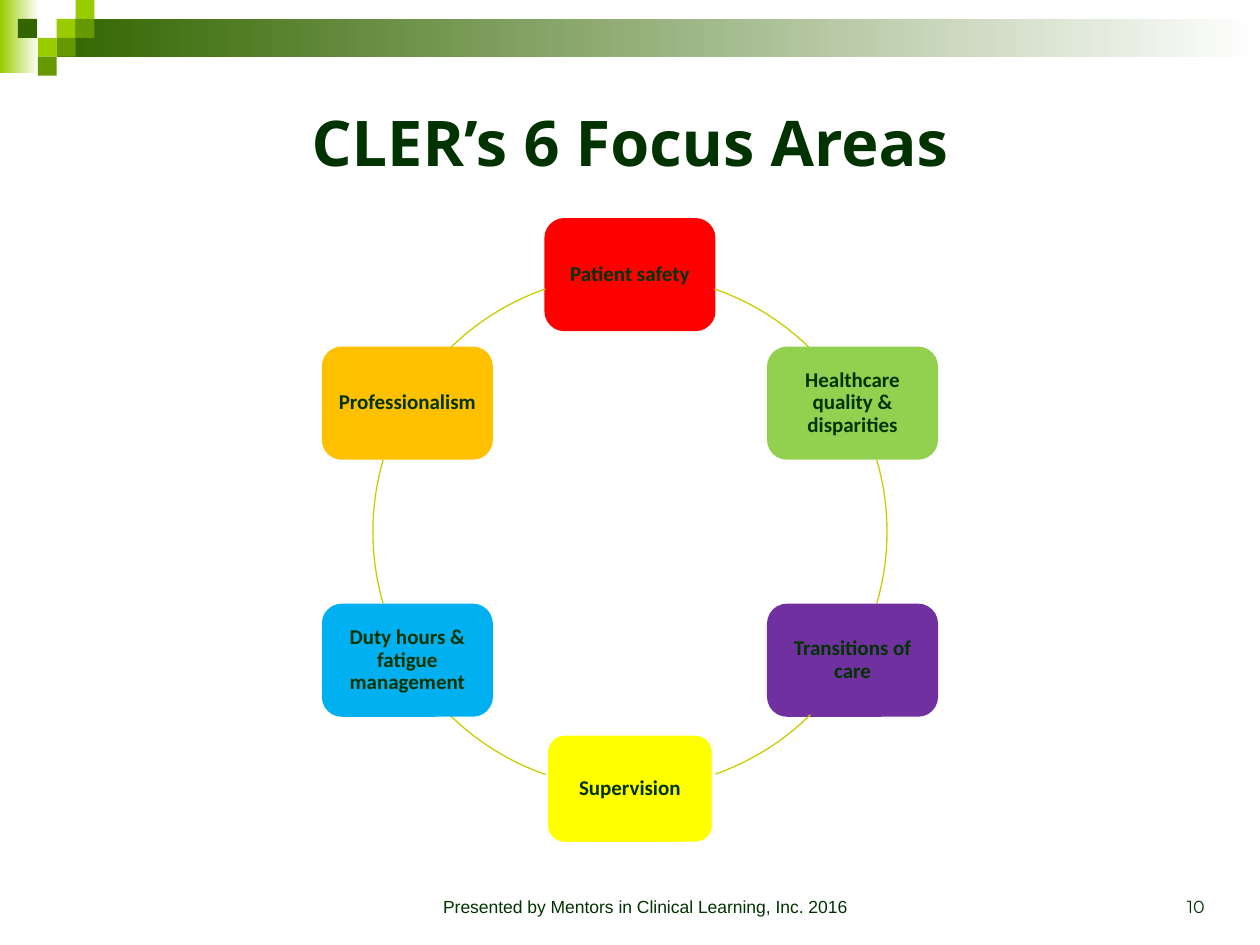
"""Build the slide on the six CLER focus areas."""
from dataclasses import dataclass
from math import cos, radians, sin

from pptx import Presentation, util as u
from pptx.dml import color
from pptx.enum import shapes, text


@dataclass(frozen=True)
class Theme:
    ink: str = "003300"
    ring: str = "CCCC00"
    white: str = "FFFFFF"
    lime: str = "99CC00"
    leaf: str = "669900"
    forest: str = "336600"
    title_size: int = 36
    label_size: int = 12
    footer_size: int = 10


THEME = Theme()
SHAPE = shapes.MSO_SHAPE
ALIGN = text.PP_ALIGN
ANCHOR = text.MSO_ANCHOR

FOCUS_AREAS = [
    ("Patient safety", "FF0000", "FF0000"),
    ("Healthcare quality & disparities", "92D050", "92D050"),
    ("Transitions of care", "7030A0", "7030A0"),
    ("Supervision", "FFFF00", THEME.white),
    ("Duty hours & fatigue management", "00B0F0", "00B0F0"),
    ("Professionalism", "FFC000", "FFC000"),
]
ARC_SPANS = [(289.2, 314.6), (343.8, 16.2), (45.4, 70.8),
             (109.2, 134.6), (163.8, 196.2), (225.4, 250.8)]
MOSAIC = [(3, 1, THEME.lime), (4, 0, THEME.lime), (4, 1, THEME.leaf),
          (2, 2, THEME.lime), (0.95, 1, THEME.forest), (3, 2, THEME.leaf),
          (2, 3, THEME.leaf)]
TILE = 0.15
CENTER_X, CENTER_Y, RADIUS = 5, 4.22, 2.04
BOX_WIDTH, BOX_HEIGHT = 1.33, 0.87


def rgb(value):
    return color.RGBColor.from_string(value)


def apply(target, values):
    for name, value in values.items():
        setattr(target, name, value)


class SlideBuilder:
    def __init__(self, slide, theme):
        self.slide = slide
        self.theme = theme

    def shape(self, kind, left, top, width, height):
        item = self.slide.shapes.add_shape(kind, *map(u.Inches, (left, top, width, height)))
        item.shadow.inherit = False
        return item

    def outline(self, item, line, weight):
        item.line.color.rgb = rgb(line)
        item.line.width = u.Pt(weight)

    def block(self, left, top, width, height, fill):
        item = self.shape(SHAPE.RECTANGLE, left, top, width, height)
        item.fill.solid()
        item.fill.fore_color.rgb = rgb(fill)
        item.line.fill.background()

    def fade(self, left, top, width, height, start):
        item = self.shape(SHAPE.RECTANGLE, left, top, width, height)
        item.fill.gradient()
        item.fill.gradient_angle = 0
        stops = zip(item.fill.gradient_stops, (0, 1), (start, self.theme.white))
        for stop, position, tone in stops:
            stop.position = position
            stop.color.rgb = rgb(tone)
        item.line.fill.background()

    def label(self, frame, words, font, size, align, anchor, bold=False, inset=None, spacing=None):
        apply(frame, {"word_wrap": True, "vertical_anchor": anchor})
        if inset is not None:
            sides = ("left", "top", "right", "bottom")
            apply(frame, {f"margin_{side}": u.Inches(inset) for side in sides})
        paragraph = frame.paragraphs[0]
        apply(paragraph, {"alignment": align, "line_spacing": spacing})
        run = paragraph.add_run()
        run.text = words
        apply(run.font, {"name": font, "size": u.Pt(size), "bold": bold})
        run.font.color.rgb = rgb(self.theme.ink)

    def title(self, words):
        heading = self.slide.shapes.title
        apply(heading, {"left": u.Inches(0.5), "top": u.Inches(0.5),
                        "width": u.Inches(9), "height": u.Inches(1.25)})
        self.label(heading.text_frame, words, "Open Sans", self.theme.title_size,
                   ALIGN.CENTER, ANCHOR.MIDDLE, bold=True)

    def footer(self, left, width, words, font, align):
        note = self.slide.shapes.add_textbox(
            u.Inches(left), u.Inches(6.83), u.Inches(width), u.Inches(0.5))
        self.label(note.text_frame, words, font, self.theme.footer_size, align, ANCHOR.BOTTOM)

    def focus_area(self, angle, words, fill, line):
        left = CENTER_X + RADIUS * cos(radians(angle)) - BOX_WIDTH / 2
        top = CENTER_Y + RADIUS * sin(radians(angle)) - BOX_HEIGHT / 2
        area = self.shape(SHAPE.ROUNDED_RECTANGLE, left, top, BOX_WIDTH, BOX_HEIGHT)
        area.fill.solid()
        area.fill.fore_color.rgb = rgb(fill)
        self.outline(area, line, 2)
        self.label(area.text_frame, words, "Calibri", self.theme.label_size,
                   ALIGN.CENTER, ANCHOR.MIDDLE, bold=True, inset=0.05, spacing=0.9)

    def arc(self, start, end):
        link = self.shape(SHAPE.ARC, CENTER_X - RADIUS, CENTER_Y - RADIUS, 2 * RADIUS, 2 * RADIUS)
        for index, degrees in enumerate((start, end)):
            link.adjustments[index] = degrees * 0.6
        link.fill.background()
        self.outline(link, self.theme.ring, 0.75)


def main():
    deck = Presentation()
    apply(deck, {"slide_width": u.Inches(10), "slide_height": u.Inches(7.5)})
    builder = SlideBuilder(deck.slides.add_slide(deck.slide_layouts[5]), THEME)

    builder.fade(0, 0, 0.31, 0.58, THEME.lime)
    builder.fade(0.45, TILE, 9.55, 2 * TILE, THEME.forest)
    for column, row, fill in MOSAIC:
        builder.block(column * TILE, row * TILE, TILE, TILE, fill)

    builder.title("CLER’s 6 Focus Areas")
    builder.footer(3.08, 4.08, "Presented by Mentors in Clinical Learning, Inc. 2016",
                   "Arial", ALIGN.CENTER)
    builder.footer(7.33, 2.33, "10", "Montserrat", ALIGN.RIGHT)

    for index, (area, span) in enumerate(zip(FOCUS_AREAS, ARC_SPANS)):
        builder.focus_area(60 * index - 90, *area)
        builder.arc(*span)

    deck.save("out.pptx")


if __name__ == "__main__":
    main()
